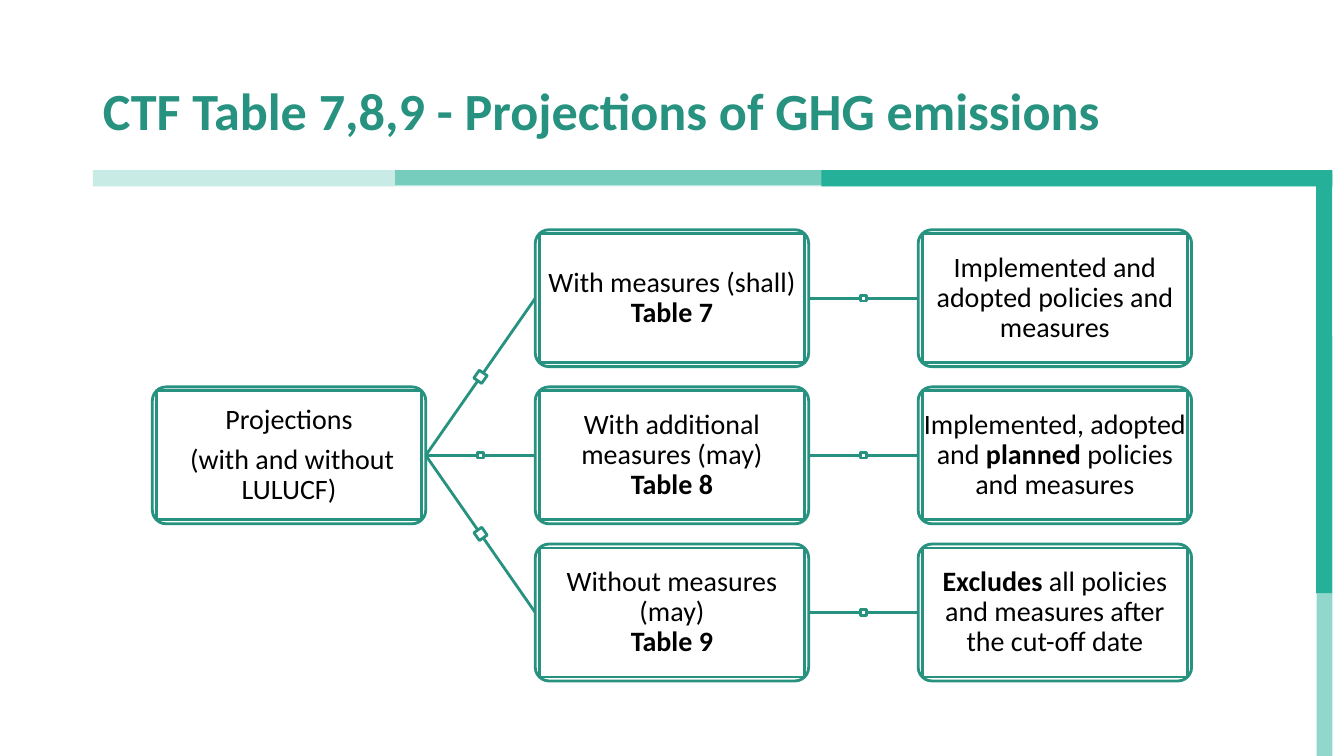
from math import atan2, degrees

from lxml import etree
from pptx import Presentation
from pptx.dml.color import RGBColor
from pptx.enum.shapes import MSO_CONNECTOR, MSO_SHAPE
from pptx.enum.text import MSO_ANCHOR, PP_ALIGN
from pptx.oxml.ns import qn
from pptx.util import Cm, Pt

RECTANGLE, ROUNDED = MSO_SHAPE.RECTANGLE, MSO_SHAPE.ROUNDED_RECTANGLE
STRAIGHT = MSO_CONNECTOR.STRAIGHT
MIDDLE = MSO_ANCHOR.MIDDLE
LEFT, CENTER = PP_ALIGN.LEFT, PP_ALIGN.CENTER

TEAL = RGBColor(0x25, 0xB1, 0x99)
DARK_TEAL = RGBColor(0x26, 0x92, 0x7F)
WHITE = RGBColor(0xFF, 0xFF, 0xFF)
BLACK = RGBColor(0, 0, 0)
FONT = "Calibri"

BOX_WIDTH, BOX_HEIGHT = 6.89, 3.45
FIRST_COLUMN, COLUMN_STEP = 3.84, 9.65
FIRST_ROW, ROW_STEP = 5.79, 3.96
FRAME_GAP = 0.1

BANDS = [
    (33.18, 8.47, 0.4, 10.58, 50),
    (2.34, 4.29, 31.21, 0.41, 25),
    (9.96, 4.29, 23.59, 0.38, 50),
    (20.7, 4.29, 12.88, 0.41, 100),
    (33.17, 4.36, 0.4, 10.59, 100),
]

ROOT = [[("Projections", False)], [(" (with and without LULUCF)", False)]]
SCENARIOS = [
    ("With measures (shall)", "Table 7",
     [("Implemented and adopted policies and measures", False)]),
    ("With additional measures (may)", "Table 8",
     [("Implemented, adopted and ", False), ("planned", True),
      (" policies and measures", False)]),
    ("Without measures (may)", "Table 9",
     [("Excludes ", True),
      ("all policies and measures after the cut-off date", False)]),
]


def add_band(slide, left, top, width, height, opacity):
    band = slide.shapes.add_shape(
        RECTANGLE, Cm(left), Cm(top), Cm(width), Cm(height))
    band.shadow.inherit = False
    band.line.fill.background()
    band.fill.solid()
    band.fill.fore_color.rgb = TEAL
    if opacity < 100:
        color = band.fill._xPr.find(qn("a:solidFill"))[0]
        etree.SubElement(color, qn("a:alpha"), val=str(opacity * 1000))


def add_outlined(slide, kind, left, top, width, height):
    outlined = slide.shapes.add_shape(
        kind, Cm(left), Cm(top), Cm(width), Cm(height))
    outlined.shadow.inherit = False
    outlined.fill.solid()
    outlined.fill.fore_color.rgb = WHITE
    outlined.line.color.rgb = DARK_TEAL
    outlined.line.width = Pt(2)
    return outlined


def box_corner(column, row):
    return FIRST_COLUMN + column * COLUMN_STEP, FIRST_ROW + row * ROW_STEP


def add_box(slide, column, row, lines, space_before=0):
    left, top = box_corner(column, row)
    frame = add_outlined(slide, ROUNDED, left, top, BOX_WIDTH, BOX_HEIGHT)
    frame.adjustments[0] = 0.1
    label = add_outlined(slide, RECTANGLE, left + FRAME_GAP, top + FRAME_GAP,
                         BOX_WIDTH - 2 * FRAME_GAP, BOX_HEIGHT - 2 * FRAME_GAP)
    text = label.text_frame
    text.word_wrap = True
    text.vertical_anchor = MIDDLE
    text.margin_left = text.margin_right = Cm(0.03)
    text.margin_top = text.margin_bottom = Cm(0.03)
    for index, line in enumerate(lines):
        paragraph = text.add_paragraph() if index else text.paragraphs[0]
        paragraph.alignment = CENTER
        paragraph.line_spacing = 0.9
        paragraph.space_before = Pt(space_before if index else 0)
        paragraph.font.name = FONT
        paragraph.font.size = Pt(20)
        paragraph.font.color.rgb = BLACK
        for words, bold in line:
            run = paragraph.add_run()
            run.text = words
            run.font.bold = bold


def add_link(slide, column, from_row, to_row):
    left, top = box_corner(column, from_row)
    start_x, start_y = left + BOX_WIDTH, top + BOX_HEIGHT / 2
    end_x, end_y = start_x + COLUMN_STEP - BOX_WIDTH, \
        start_y + (to_row - from_row) * ROW_STEP
    link = slide.shapes.add_connector(
        STRAIGHT, Cm(start_x), Cm(start_y), Cm(end_x), Cm(end_y))
    link.line.color.rgb = DARK_TEAL
    link.line.width = Pt(2)
    etree.SubElement(link._element.spPr, qn("a:effectLst"))
    size = 0.14 if from_row == to_row else 0.24
    marker = add_outlined(slide, RECTANGLE, (start_x + end_x - size) / 2,
                          (start_y + end_y - size) / 2, size, size)
    marker.rotation = degrees(atan2(end_y - start_y, end_x - start_x))


def set_title(slide, words):
    title = slide.shapes.title
    title.left, title.top = Cm(2.34), Cm(1.02)
    title.width, title.height = Cm(29.21), Cm(3.68)
    title.text_frame.text = words
    title.text_frame.vertical_anchor = MIDDLE
    paragraph = title.text_frame.paragraphs[0]
    paragraph.alignment = LEFT
    paragraph.line_spacing = 0.9
    paragraph.font.name = FONT
    paragraph.font.size = Pt(37.3)
    paragraph.font.bold = True
    paragraph.font.color.rgb = DARK_TEAL


def main():
    deck = Presentation()
    deck.slide_width, deck.slide_height = Cm(33.87), Cm(19.05)
    slide = deck.slides.add_slide(deck.slide_layouts[5])
    for band in BANDS:
        add_band(slide, *band)
    set_title(slide, "CTF Table 7,8,9 - Projections of GHG emissions")
    add_box(slide, 0, 1, ROOT, space_before=7)
    for row, (scenario, table, coverage) in enumerate(SCENARIOS):
        add_link(slide, 0, 1, row)
        add_box(slide, 1, row, [[(scenario, False)], [(table, True)]])
        add_link(slide, 1, row, row)
        add_box(slide, 2, row, [coverage])
    deck.save("out.pptx")


if __name__ == "__main__":
    main()
